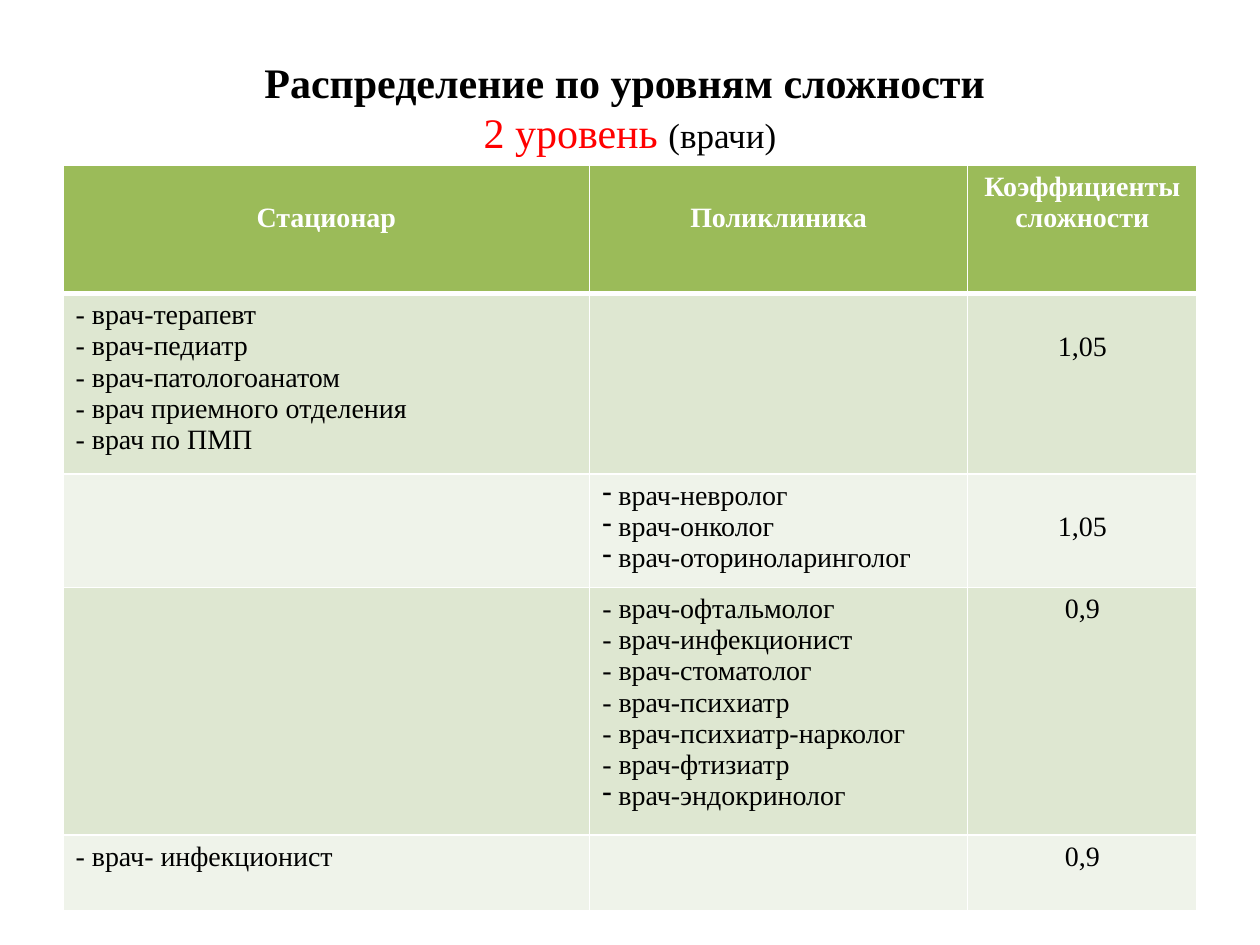
import pptx
import pptx.dml.color
import pptx.enum.text
import pptx.util
from lxml import etree
from pptx.oxml.ns import qn
from pptx.util import Inches

FONT = "Times New Roman"
COLORS = {
    "text": "000000", "accent": "FF0000", "white": "FFFFFF",
    "header": "9BBB59", "band_dark": "DEE7D1", "band_light": "EFF3EA",
}
CENTER = pptx.enum.text.PP_ALIGN.CENTER
LEFT = pptx.enum.text.PP_ALIGN.LEFT


def add_run(paragraph, text, size, color, bold=False):
    run = paragraph.add_run()
    run.text = text
    run.font.name = FONT
    run.font.size = pptx.util.Pt(size)
    run.font.bold = bold
    run.font.color.rgb = pptx.dml.color.RGBColor.from_string(COLORS[color])


def set_borders(cell, bottom_width):
    properties = cell._tc.get_or_add_tcPr()
    for position, side in enumerate(("lnL", "lnR", "lnT", "lnB")):
        width = bottom_width if side == "lnB" else 1
        line = etree.Element(qn("a:" + side), w=str(pptx.util.Pt(width)))
        fill = etree.SubElement(line, qn("a:solidFill"))
        etree.SubElement(fill, qn("a:srgbClr"), val=COLORS["white"])
        properties.insert(position, line)


presentation = pptx.Presentation()
presentation.slide_width = Inches(10)
presentation.slide_height = Inches(7.5)
slide = presentation.slides.add_slide(presentation.slide_layouts[6])

# Title
title = slide.shapes.add_textbox(Inches(0.5), Inches(0.3), Inches(9), Inches(1.09)).text_frame
title.word_wrap = True
title.vertical_anchor = pptx.enum.text.MSO_ANCHOR.MIDDLE
heading = title.paragraphs[0]
heading.alignment = CENTER
add_run(heading, "Распределение по уровням сложности ", 24, "text", bold=True)
heading.add_line_break()
add_run(heading, "2 уровень ", 24, "accent")
add_run(heading, "(врачи)", 20, "text")

# Table content: a line that starts with a space carries a dash bullet
rows = [
    [["Стационар"], ["Поликлиника"], ["Коэффициенты сложности"]],
    [["- врач-терапевт", "- врач-педиатр", "- врач-патологоанатом",
      "- врач приемного отделения", "- врач по ПМП"], [], ["1,05"]],
    [[], [" врач-невролог", " врач-онколог", " врач-оториноларинголог"], ["1,05"]],
    [[], ["- врач-офтальмолог", "- врач-инфекционист", "- врач-стоматолог",
          "- врач-психиатр", "- врач-психиатр-нарколог", "- врач-фтизиатр",
          " врач-эндокринолог"], ["0,9"]],
    [["- врач- инфекционист"], [], ["0,9"]],
]
column_widths = [4.18, 3, 1.82]
row_heights = [1.02, 1.33, 0.85, 1.83, 0.6]
lowered_cells = {(0, 0), (0, 1), (1, 2), (2, 2)}  # text starts one line down

# Table grid
table = slide.shapes.add_table(
    len(rows), len(column_widths), Inches(0.5), Inches(1.31),
    Inches(sum(column_widths)), Inches(sum(row_heights))).table
for column, width in zip(table.columns, column_widths):
    column.width = Inches(width)
for row, height in zip(table.rows, row_heights):
    row.height = Inches(height)

# Table cells
for r, row_texts in enumerate(rows):
    is_header = r == 0
    band = "header" if is_header else ("band_dark" if r % 2 else "band_light")
    for c, lines in enumerate(row_texts):
        cell = table.cell(r, c)
        cell.fill.solid()
        cell.fill.fore_color.rgb = pptx.dml.color.RGBColor.from_string(COLORS[band])
        set_borders(cell, 3 if is_header else 1)
        if (r, c) in lowered_cells:
            cell.margin_top = Inches(0.3)
        for i, line in enumerate(lines):
            frame = cell.text_frame
            paragraph = frame.paragraphs[0] if i == 0 else frame.add_paragraph()
            paragraph.alignment = CENTER if is_header or c == 2 else LEFT
            if line.startswith(" "):
                bullet_properties = paragraph._p.get_or_add_pPr()
                bullet_properties.set("marL", "0")
                bullet_properties.set("indent", "0")
                etree.SubElement(bullet_properties, qn("a:buFontTx"))
                etree.SubElement(bullet_properties, qn("a:buChar"), char="-")
            add_run(paragraph, line, 16, "white" if is_header else "text", bold=is_header)

presentation.save("out.pptx")
